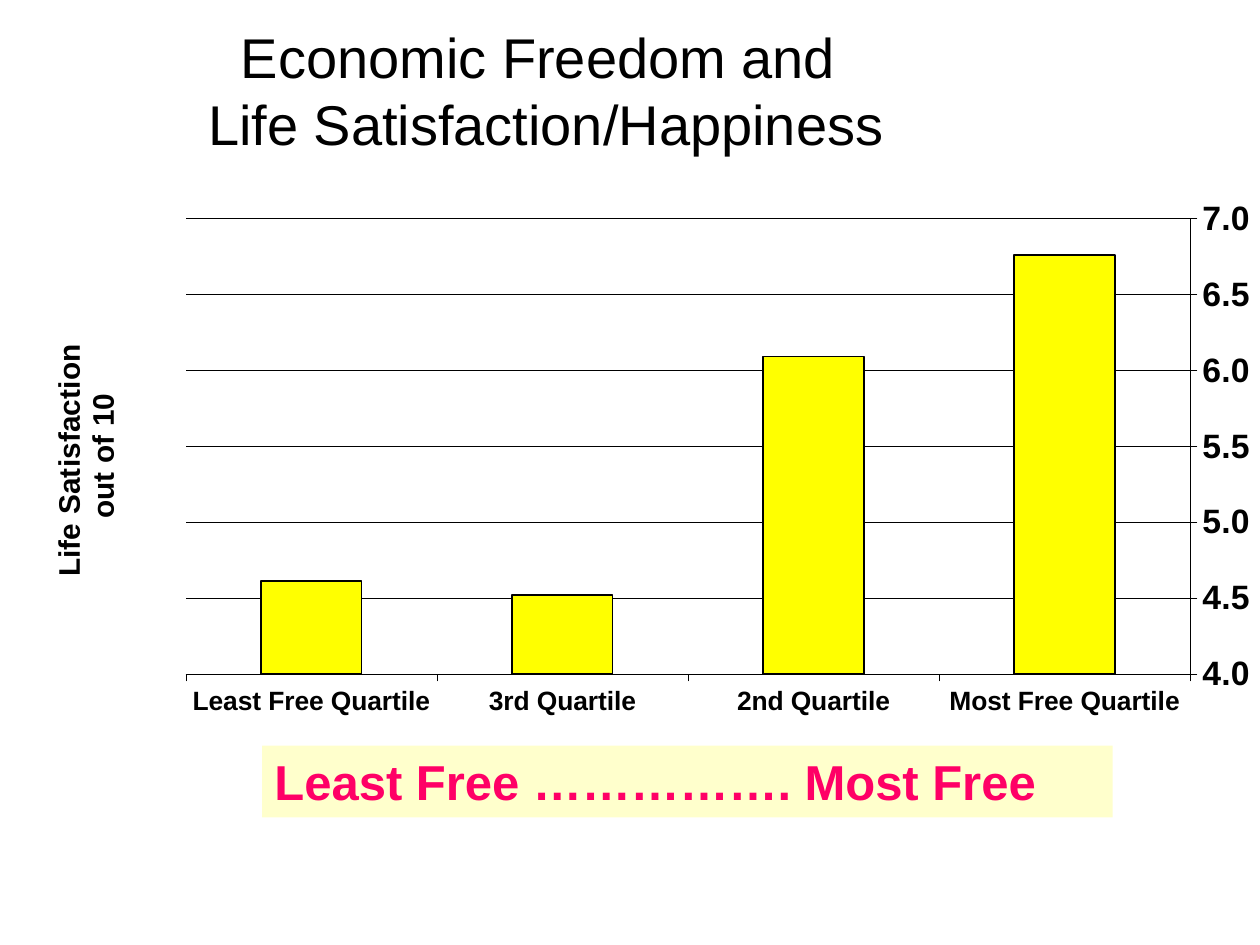
from dataclasses import dataclass

import lxml.etree
import pptx
import pptx.chart.data
import pptx.dml.color
import pptx.enum.chart
import pptx.enum.shapes
import pptx.enum.text
import pptx.oxml.ns
import pptx.util

SLIDE_WIDTH, SLIDE_HEIGHT = 10, 7.5
TITLE_ONLY = 5


@dataclass(frozen=True)
class Theme:
    font: str = "Arial"
    ink: str = "000000"
    bar: str = "FFFF00"
    band: str = "FFFFCC"
    accent: str = "FF0066"
    title_size: float = 32
    band_size: float = 28
    value_size: float = 19.3
    axis_title_size: float = 17
    category_size: float = 15.1
    hairline: float = 0.25
    bar_line: float = 1.06


THEME = Theme()


def rgb(color):
    return pptx.dml.color.RGBColor.from_string(color)


def place(left, top, width, height):
    """Turn shares of the slide's size into lengths."""
    return [pptx.util.Inches(share * side) for share, side in
            zip((left, top, width, height), (SLIDE_WIDTH, SLIDE_HEIGHT) * 2)]


def format_font(font, size, color=THEME.ink, bold=False):
    font.name = THEME.font
    font.size = pptx.util.Pt(size)
    font.bold = bold
    font.color.rgb = rgb(color)


def write_text(frame, text, align=None, **font_format):
    """Fill the first paragraph; a newline becomes a line break."""
    para = frame.paragraphs[0]
    para.alignment = align
    for index, line in enumerate(text.split("\n")):
        if index:
            para.add_line_break()
        span = para.add_run()
        span.text = line
        format_font(span.font, **font_format)


def draw_line(line, width):
    line.color.rgb = rgb(THEME.ink)
    line.width = pptx.util.Pt(width)


def set_layout(parent, index, **shares):
    """Place a chart part by shares of the chart's size."""
    qn = pptx.oxml.ns.qn
    layout = parent.find(qn("c:layout"))
    if layout is None:
        layout = parent.makeelement(qn("c:layout"))
        parent.insert(index, layout)
    manual = lxml.etree.SubElement(layout, qn("c:manualLayout"))
    for name, value in shares.items():
        lxml.etree.SubElement(manual, qn(f"c:{name}")).set("val", str(value))


def add_title(slide, text):
    title = slide.shapes.title
    title.left, title.top, title.width, title.height = place(0.025, 0, 0.817, 0.19)
    title.text_frame.vertical_anchor = pptx.enum.text.MSO_ANCHOR.MIDDLE
    write_text(title.text_frame, text, align=pptx.enum.text.PP_ALIGN.CENTER,
               size=THEME.title_size)


def format_axis(axis, size):
    format_font(axis.tick_labels.font, size, bold=True)
    draw_line(axis.format.line, THEME.hairline)
    axis.major_tick_mark = pptx.enum.chart.XL_TICK_MARK.OUTSIDE
    axis.minor_tick_mark = pptx.enum.chart.XL_TICK_MARK.NONE


def format_value_axis(axis, title):
    format_axis(axis, THEME.value_size)
    axis.minimum_scale, axis.maximum_scale, axis.major_unit = 4, 7, 0.5
    axis.tick_labels.number_format = "0.0"
    axis.tick_labels.number_format_is_linked = False
    axis.has_major_gridlines = True
    draw_line(axis.major_gridlines.format.line, THEME.hairline)
    frame = axis.axis_title.text_frame
    write_text(frame, title, align=pptx.enum.text.PP_ALIGN.CENTER,
               size=THEME.axis_title_size, bold=True)
    body = frame._txBody.bodyPr
    body.set("rot", "-5400000")
    body.set("vert", "horz")
    set_layout(axis.axis_title._element, 1, xMode="edge", yMode="edge",
               x=0.02, y=0.2)


def add_satisfaction_chart(slide, values, axis_title):
    data = pptx.chart.data.CategoryChartData()
    data.categories = list(values)
    data.add_series("Series 1", list(values.values()))
    chart = slide.shapes.add_chart(
        pptx.enum.chart.XL_CHART_TYPE.COLUMN_CLUSTERED,
        *place(0.017, 0.21, 0.975, 0.704), data).chart
    format_font(chart.font, THEME.value_size, bold=True)
    chart.has_legend = False
    chart.has_title = False

    plot = chart.plots[0]
    plot.gap_width = 150
    plot.vary_by_categories = False
    bars = plot.series[0].format
    bars.fill.solid()
    bars.fill.fore_color.rgb = rgb(THEME.bar)
    draw_line(bars.line, THEME.bar_line)

    format_axis(chart.category_axis, THEME.category_size)
    chart.category_axis.reverse_order = True
    chart.category_axis.tick_label_position = pptx.enum.chart.XL_TICK_LABEL_POSITION.LOW
    format_value_axis(chart.value_axis, axis_title)
    set_layout(chart._chartSpace.chart.plotArea, 0, layoutTarget="inner",
               xMode="edge", yMode="edge", x=0.134, y=0.03, w=0.819, h=0.685)


def add_band(slide, text):
    band = slide.shapes.add_shape(pptx.enum.shapes.MSO_SHAPE.RECTANGLE,
                                  *place(0.208, 0.789, 0.675, 0.076))
    band.shadow.inherit = False
    band.fill.solid()
    band.fill.fore_color.rgb = rgb(THEME.band)
    band.line.fill.background()
    frame = band.text_frame
    frame.word_wrap = True
    frame.auto_size = pptx.enum.text.MSO_AUTO_SIZE.SHAPE_TO_FIT_TEXT
    frame.vertical_anchor = pptx.enum.text.MSO_ANCHOR.TOP
    write_text(frame, text, align=pptx.enum.text.PP_ALIGN.LEFT,
               size=THEME.band_size, color=THEME.accent, bold=True)


def main():
    deck = pptx.Presentation()
    deck.slide_width = pptx.util.Inches(SLIDE_WIDTH)
    deck.slide_height = pptx.util.Inches(SLIDE_HEIGHT)
    page = deck.slides.add_slide(deck.slide_layouts[TITLE_ONLY])
    add_title(page, "Economic Freedom and \nLife Satisfaction/Happiness")
    satisfaction = {
        "Most Free Quartile": 6.76,
        "2nd Quartile": 6.09,
        "3rd Quartile": 4.52,
        "Least Free Quartile": 4.61,
    }
    add_satisfaction_chart(page, satisfaction, "Life Satisfaction \nout of 10")
    add_band(page, "Least Free ……………. Most Free")
    deck.save("out.pptx")


if __name__ == "__main__":
    main()
